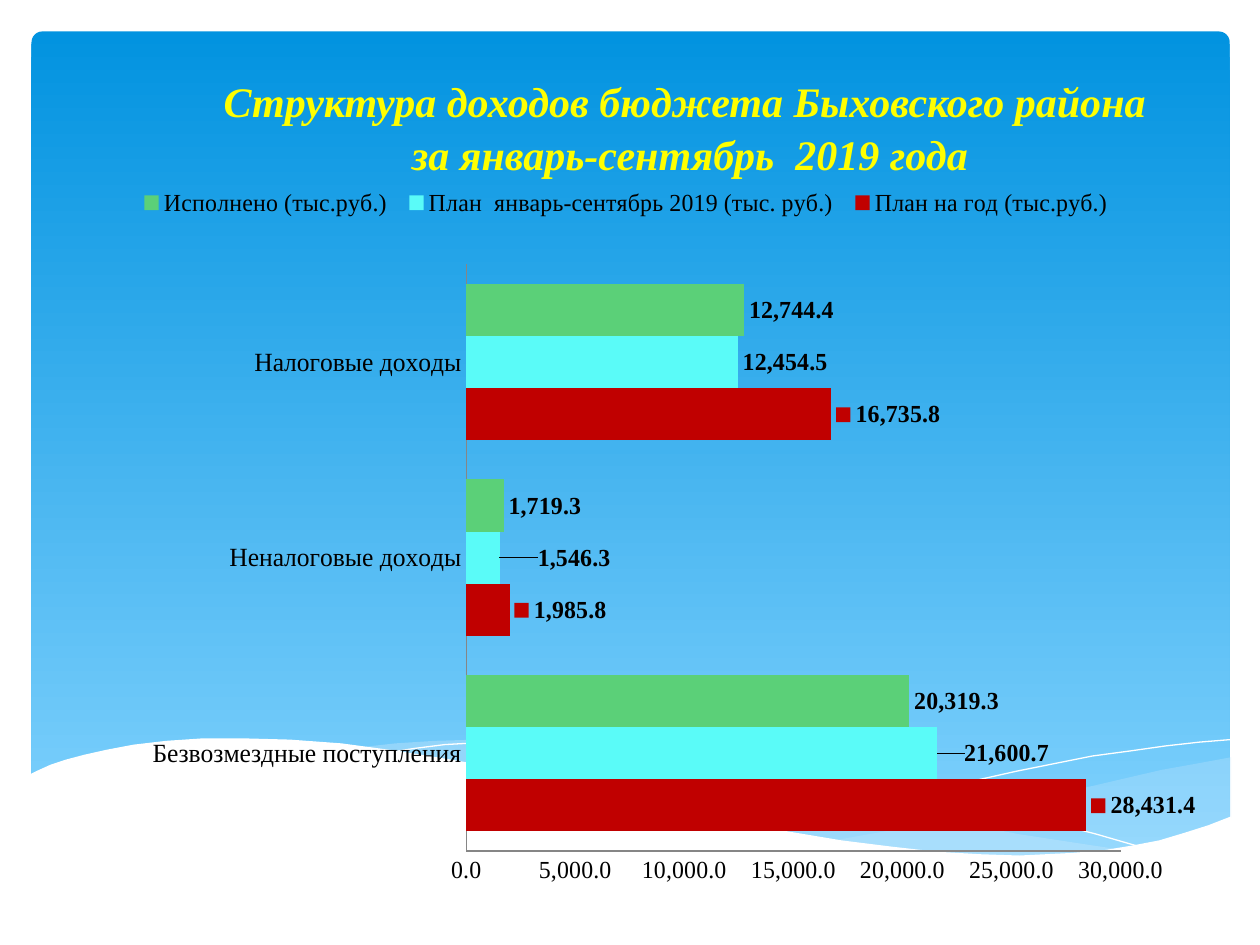
from lxml.etree import SubElement
from pptx import Presentation
from pptx.chart.data import CategoryChartData
from pptx.dml.color import RGBColor
from pptx.enum.chart import XL_CHART_TYPE, XL_LABEL_POSITION, XL_LEGEND_POSITION, XL_TICK_MARK
from pptx.enum.shapes import MSO_SHAPE
from pptx.enum.text import MSO_ANCHOR, PP_ALIGN
from pptx.oxml import parse_xml
from pptx.oxml.ns import nsdecls, qn
from pptx.util import Inches, Pt

# Content
TITLE = ["Структура доходов бюджета Быховского района ", "за январь-сентябрь  2019 года"]
CATS = ["Безвозмездные поступления", "Неналоговые доходы", "Налоговые доходы"]
SERIES = [
    ("План на год (тыс.руб.)", "C00000", [28431.4, 1985.8, 16735.8]),
    ("План  январь-сентябрь 2019 (тыс. руб.)", "5AFBF8", [21600.7, 1546.3, 12454.5]),
    ("Исполнено (тыс.руб.)", "5BD078", [20319.3, 1719.3, 12744.4]),
]
SHIFTS = [(0.02, 0), (0.03, 0)]  # moved labels of the middle series
FACE = "Times New Roman"
FORMAT = "#,##0.0"

# Waves: points, fill, opacity in percent (no fill means a white line)
WAVES = [
    ([(9.77, 6.01), (9.5, 6.06), (9.22, 6.11), (8.92, 6.18), (8.62, 6.25), (8.06, 6.39),
      (7.54, 6.5), (7.07, 6.59), (6.62, 6.67), (6.92, 6.71), (7.19, 6.74), (7.46, 6.77),
      (7.7, 6.79), (8.04, 6.8), (8.36, 6.79), (8.64, 6.77), (8.9, 6.74), (9.14, 6.69),
      (9.37, 6.63), (9.51, 6.59), (9.77, 6.49)], "C6E7FC", 29),
    ([(8.94, 6.75), (8.67, 6.71), (8.08, 6.62), (7.42, 6.49), (6.69, 6.33), (6.3, 6.24),
      (5.84, 6.13), (5.42, 6.04), (5.02, 5.98), (4.65, 5.93), (4.2, 5.89), (3.8, 5.87),
      (3.45, 5.88), (3.14, 5.9), (2.87, 5.93), (3.23, 5.98), (3.63, 6.04), (4.05, 6.13),
      (4.5, 6.24), (5.3, 6.42), (5.85, 6.54), (6.35, 6.63), (6.81, 6.7), (7.23, 6.76),
      (7.62, 6.79), (8.08, 6.8), (8.49, 6.79), (8.77, 6.77)], "C6E7FC", 40),
    ([(3.1, 5.97), (3.29, 5.94), (3.53, 5.91), (3.88, 5.89), (4.33, 5.89), (4.69, 5.9),
      (5.11, 5.94), (5.57, 5.98), (6.09, 6.06), (6.66, 6.15), (7.28, 6.28), (7.96, 6.43),
      (8.7, 6.62), (9.08, 6.73)], None, 100),
    ([(6.14, 6.59), (6.53, 6.48), (6.96, 6.37), (7.49, 6.25), (8.07, 6.12), (8.67, 6),
      (8.97, 5.96), (9.25, 5.92), (9.52, 5.89), (9.76, 5.87)], None, 100),
    ([(9.77, 6.48), (9.59, 6.55), (9.4, 6.61), (9.2, 6.67), (8.99, 6.71), (8.75, 6.75),
      (8.5, 6.77), (8.09, 6.79), (7.78, 6.78), (7.44, 6.76), (7.08, 6.72), (6.68, 6.67),
      (6.26, 6.6), (5.79, 6.51), (5.29, 6.41), (4.75, 6.29), (4.18, 6.15), (3.65, 6.04),
      (3.16, 5.96), (2.71, 5.9), (2.3, 5.87), (1.93, 5.86), (1.61, 5.86), (1.32, 5.88),
      (1.06, 5.91), (0.85, 5.95), (0.67, 5.99), (0.52, 6.03), (0.4, 6.07), (0.29, 6.12),
      (0.23, 6.15), (0.23, 7.31), (9.77, 7.31)], "FFFFFF", 100),
]


def rgb(code):
    return RGBColor.from_string(code)


def style(font, size, color="000000", bold=False, italic=False):
    font.name, font.size, font.bold, font.italic = FACE, Pt(size), bold, italic
    font.color.rgb = rgb(color)


def write(slide, lines, box, space=1.0, **form):
    frame = slide.shapes.add_textbox(*map(Inches, box)).text_frame
    frame.word_wrap = True
    frame.vertical_anchor = MSO_ANCHOR.BOTTOM
    para = frame.paragraphs[0]
    para.alignment, para.line_spacing = PP_ALIGN.CENTER, space
    for num, line in enumerate(lines):
        if num:
            para.add_line_break()
        run = para.add_run()
        run.text = line
        style(run.font, **form)


def wave(slide, points, color, alpha):
    spots = [(Inches(x), Inches(y)) for x, y in points]
    maker = slide.shapes.build_freeform(*spots[0])
    maker.add_line_segments(spots[1:], close=bool(color))
    shape = maker.convert_to_shape()
    shape.shadow.inherit = False
    if not color:
        shape.fill.background()
        shape.line.color.rgb = rgb("FFFFFF")
        shape.line.width = Pt(0)
        return
    shape.line.fill.background()
    shape.fill.solid()
    shape.fill.fore_color.rgb = rgb(color)
    if alpha < 100:
        tone = shape.fill._xPr.find(".//" + qn("a:srgbClr"))
        SubElement(tone, qn("a:alpha")).set("val", str(alpha * 1000))


def place(parent, index, **parts):
    """Put a manual layout into a chart part."""
    for old in parent.findall(qn("c:layout")):
        parent.remove(old)
    tags = "".join(f'<c:{key} val="{val}"/>' for key, val in parts.items())
    parent.insert(index, parse_xml(
        f'<c:layout {nsdecls("c")}><c:manualLayout>{tags}</c:manualLayout></c:layout>'))


def draw_chart(slide):
    data = CategoryChartData(number_format=FORMAT)
    data.categories = CATS
    for name, _, vals in SERIES:
        data.add_series(name, vals)
    box = map(Inches, (0.51, 1.03, 8.98, 6.11))
    chart = slide.shapes.add_chart(XL_CHART_TYPE.BAR_CLUSTERED, *box, data).chart
    chart.has_title = False
    style(chart.font, 18)

    # Axes
    for axis, size in ((chart.category_axis, 15), (chart.value_axis, 14)):
        axis.has_major_gridlines = False
        axis.major_tick_mark = axis.minor_tick_mark = XL_TICK_MARK.NONE
        axis.format.line.color.rgb = rgb("868686")
        style(axis.tick_labels.font, size)
    axis = chart.value_axis
    axis.minimum_scale, axis.maximum_scale, axis.major_unit = 0, 30000, 5000
    axis.tick_labels.number_format = FORMAT
    axis.tick_labels.number_format_is_linked = False

    # Bars and labels
    plot = chart.plots[0]
    plot.gap_width, plot.vary_by_categories = 75, False
    for num, (series, (_, color, _)) in enumerate(zip(plot.series, SERIES)):
        series.format.fill.solid()
        series.format.fill.fore_color.rgb = rgb(color)
        labels = series.data_labels
        labels.show_value, labels.show_legend_key = True, num == 0
        labels.number_format, labels.number_format_is_linked = FORMAT, False
        labels.position = XL_LABEL_POSITION.OUTSIDE_END
        style(labels.font, 14, bold=True)
    middle = plot.series[1]
    for num, (x, y) in enumerate(SHIFTS):
        label = middle.points[num].data_label
        style(label.font, 14, bold=True)
        label.position = XL_LABEL_POSITION.OUTSIDE_END
    for item, (x, y) in zip(middle.data_labels._element.findall(qn("c:dLbl")), SHIFTS):
        place(item, 1, x=x, y=y)

    # Legend and plot area
    chart.has_legend = True
    chart.legend.position = XL_LEGEND_POSITION.TOP
    chart.legend.include_in_layout = False
    style(chart.legend.font, 14)
    root = chart.element
    place(root.find(".//" + qn("c:legend")), 1, xMode="edge", yMode="edge",
          x=0.06, y=0.07, w=0.9, h=0.05)
    place(root.find(".//" + qn("c:plotArea")), 0, layoutTarget="inner", xMode="edge",
          yMode="edge", x=0.365, y=0.175, w=0.594, h=0.762)


def main():
    deck = Presentation()
    deck.slide_width, deck.slide_height = Inches(10), Inches(7.5)
    slide = deck.slides.add_slide(deck.slide_layouts[6])

    # Sky panel
    sky = slide.shapes.add_shape(MSO_SHAPE.ROUNDED_RECTANGLE,
                                 *map(Inches, (0.25, 0.25, 9.51, 6.6)))
    sky.adjustments[0] = 0.013
    sky.shadow.inherit = False
    sky.line.fill.background()
    sky.fill.gradient()
    sky.fill.gradient_angle = 270
    for stop, color, spot in zip(sky.fill.gradient_stops, ("0293E0", "83D3FE"), (0, 1)):
        stop.color.rgb, stop.position = rgb(color), spot

    for item in WAVES:
        wave(slide, *item)
    write(slide, TITLE, (0.75, 0.45, 9.45, 1.02), space=1.05,
          size=24, color="FFFF00", bold=True, italic=True)
    draw_chart(slide)
    deck.save("out.pptx")


if __name__ == "__main__":
    main()
